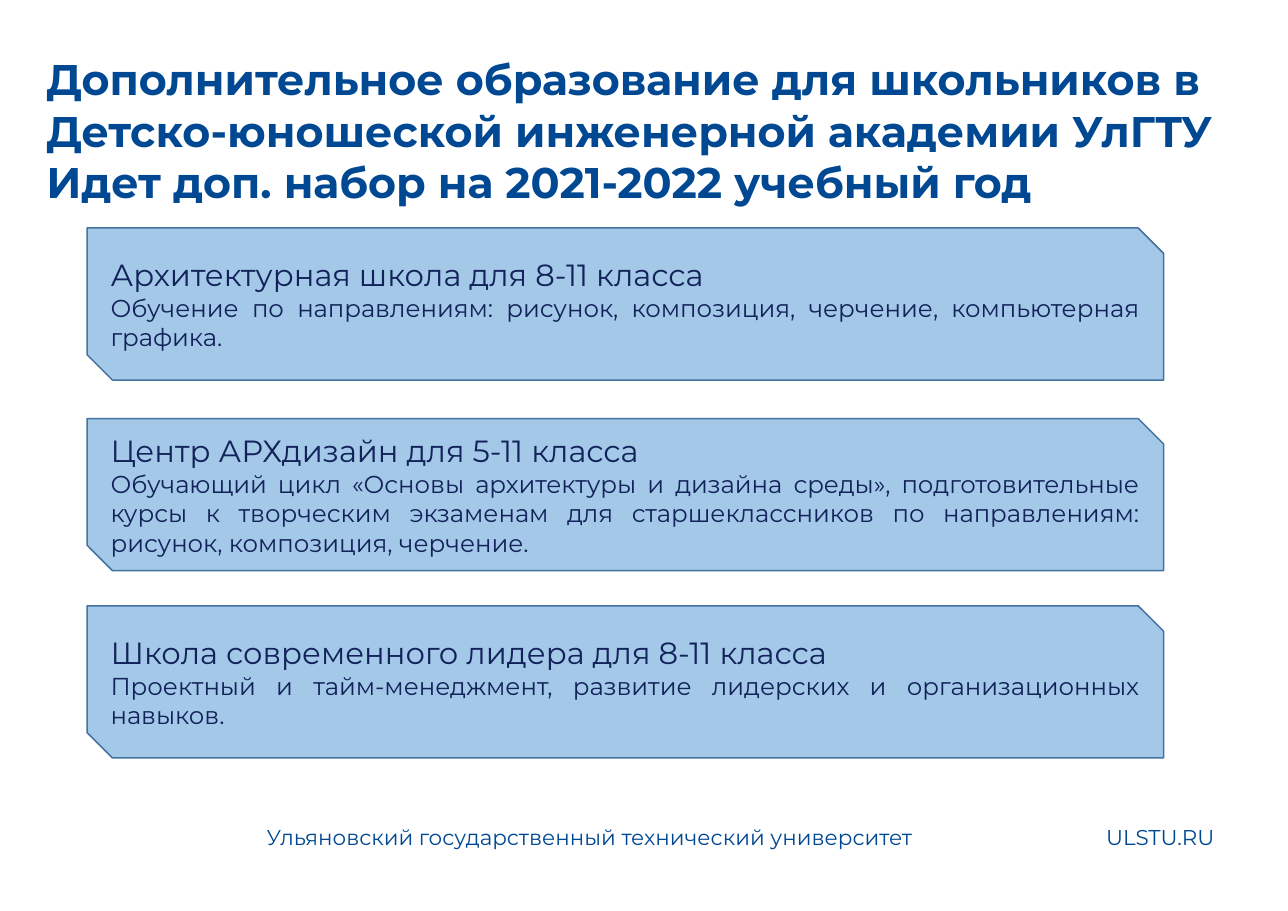
"""Build the slide on extra classes at the engineering academy for schoolchildren."""
from dataclasses import dataclass

from lxml import etree
from pptx import Presentation
from pptx.dml.color import RGBColor
from pptx.enum.shapes import MSO_SHAPE
from pptx.enum.text import MSO_ANCHOR, MSO_AUTO_SIZE, PP_ALIGN
from pptx.oxml.ns import qn
from pptx.util import Inches, Pt

SNIPPED = MSO_SHAPE.SNIP_2_DIAG_RECTANGLE
TOP, MIDDLE = MSO_ANCHOR.TOP, MSO_ANCHOR.MIDDLE
LEFT, JUSTIFY = PP_ALIGN.LEFT, PP_ALIGN.JUSTIFY
NO_AUTOFIT = MSO_AUTO_SIZE.NONE
TITLE_ONLY = 5


@dataclass(frozen=True)
class Theme:
    font: str = "Montserrat"
    brand: str = "004892"
    ink: str = "12225A"
    card_fill: str = "5B9BD5"
    card_line: str = "43739E"
    card_opacity: int = 55
    title_size: int = 28
    heading_size: int = 20
    body_size: int = 16
    footer_size: int = 14


def write(paragraph, text, *, theme, size, color, bold=False, align=LEFT):
    paragraph.alignment = align
    run = paragraph.add_run()
    run.text = text
    run.font.name = theme.font
    run.font.size = Pt(size)
    run.font.bold = bold
    run.font.color.rgb = RGBColor.from_string(color)


class SlideBuilder:
    def __init__(self, presentation, theme):
        self.theme = theme
        self.width = presentation.slide_width
        self.height = presentation.slide_height
        self.slide = presentation.slides.add_slide(presentation.slide_layouts[TITLE_ONLY])

    def box(self, left, top, width, height):
        return (round(self.width * left / 100), round(self.height * top / 100),
                round(self.width * width / 100), round(self.height * height / 100))

    def fill_text(self, shape, lines, anchor=TOP):
        frame = shape.text_frame
        frame.word_wrap = True
        frame.auto_size = NO_AUTOFIT
        frame.vertical_anchor = anchor
        for index, (text, style) in enumerate(lines):
            paragraph = frame.add_paragraph() if index else frame.paragraphs[0]
            write(paragraph, text, theme=self.theme, **style)

    def title(self, lines, *area):
        shape = self.slide.shapes.title
        shape.left, shape.top, shape.width, shape.height = self.box(*area)
        style = {"size": self.theme.title_size, "color": self.theme.brand, "bold": True}
        self.fill_text(shape, [(line, style) for line in lines])

    def footer(self, text, *area):
        shape = self.slide.shapes.add_textbox(*self.box(*area))
        style = {"size": self.theme.footer_size, "color": self.theme.brand}
        self.fill_text(shape, [(text, style)])

    def card(self, heading, description, *area):
        theme = self.theme
        shape = self.slide.shapes.add_shape(SNIPPED, *self.box(*area))
        shape.shadow.inherit = False
        shape.fill.solid()
        shape.fill.fore_color.rgb = RGBColor.from_string(theme.card_fill)
        color = shape.fill._xPr.find(qn("a:solidFill"))[0]
        etree.SubElement(color, qn("a:alpha"), val=str(theme.card_opacity * 1000))
        shape.line.color.rgb = RGBColor.from_string(theme.card_line)
        shape.line.width = Pt(1)
        self.fill_text(shape, [
            (heading, {"size": theme.heading_size, "color": theme.ink}),
            (description, {"size": theme.body_size, "color": theme.ink, "align": JUSTIFY}),
        ], MIDDLE)


COURSES = [
    (25.03, "Архитектурная школа для 8-11 класса",
     "Обучение по направлениям: рисунок, композиция, черчение, компьютерная графика."),
    (45.95, "Центр АРХдизайн для 5-11 класса",
     "Обучающий цикл «Основы архитектуры и дизайна среды», подготовительные курсы "
     "к творческим экзаменам для старшеклассников по направлениям: рисунок, "
     "композиция, черчение."),
    (66.51, "Школа современного лидера для 8-11 класса",
     "Проектный и тайм-менеджмент, развитие лидерских и организационных навыков."),
]


def main():
    presentation = Presentation()
    presentation.slide_width, presentation.slide_height = Inches(11.69), Inches(8.27)
    builder = SlideBuilder(presentation, Theme())
    builder.title([
        "Дополнительное образование для школьников в Детско-юношеской инженерной академии УлГТУ",
        "Идет доп. набор на 2021-2022 учебный год",
    ], 2.74, 5.2, 95.47, 30.35)
    builder.footer("Ульяновский государственный технический университет", 19.85, 89.84, 53.04, 4.72)
    builder.footer("ULSTU.RU", 85.03, 89.84, 11.98, 4.72)
    for top, heading, description in COURSES:
        builder.card(heading, description, 6.76, top, 83.58, 16.69)
    presentation.save("out.pptx")


if __name__ == "__main__":
    main()
